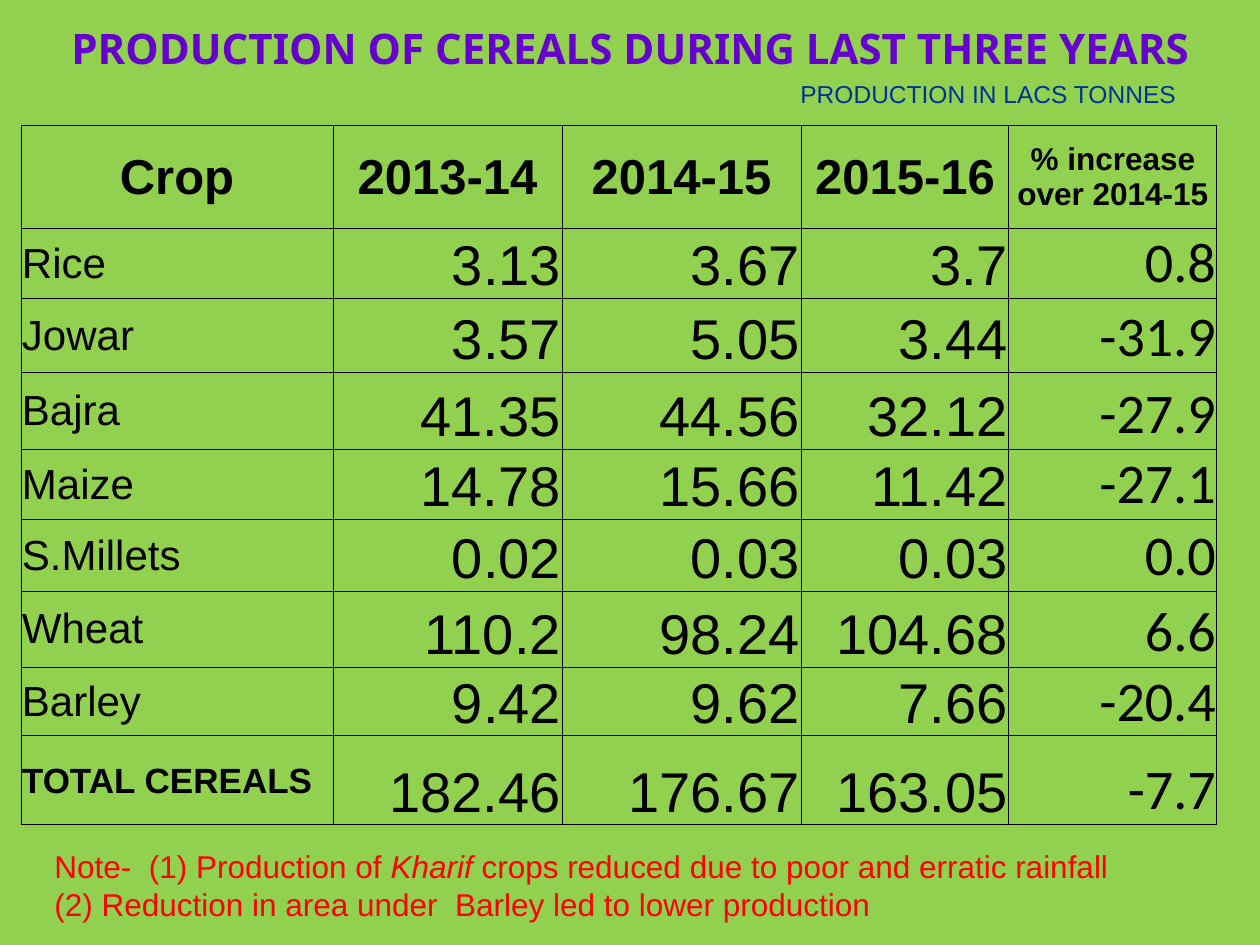
from lxml import etree
from pptx import Presentation
from pptx.dml.color import RGBColor
from pptx.enum.text import MSO_ANCHOR, PP_ALIGN
from pptx.oxml.ns import qn
from pptx.util import Emu, Pt

LEFT, CENTER, RIGHT = PP_ALIGN.LEFT, PP_ALIGN.CENTER, PP_ALIGN.RIGHT
TOP, MIDDLE, BOTTOM = MSO_ANCHOR.TOP, MSO_ANCHOR.MIDDLE, MSO_ANCHOR.BOTTOM
EMU_PER_PX = 914400 / 126

COLUMN_WIDTHS = [312, 229, 239, 208, 208]
ROW_HEIGHTS = [103, 70, 74, 77, 70, 72, 76, 69, 89]
HEADINGS = ["Crop", "2013-14", "2014-15", "2015-16", "% increase over 2014-15"]
PRODUCTION = [
    ["Rice", "3.13", "3.67", "3.7", "0.8"],
    ["Jowar", "3.57", "5.05", "3.44", "-31.9"],
    ["Bajra", "41.35", "44.56", "32.12", "-27.9"],
    ["Maize", "14.78", "15.66", "11.42", "-27.1"],
    ["S.Millets", "0.02", "0.03", "0.03", "0.0"],
    ["Wheat", "110.2", "98.24", "104.68", "6.6"],
    ["Barley", "9.42", "9.62", "7.66", "-20.4"],
    ["TOTAL CEREALS", "182.46", "176.67", "163.05", "-7.7"],
]
NOTES = [
    [
        ("Note-  (1) Production of ", {}),
        ("Kharif ", {"italic": True}),
        ("crops reduced due to poor and erratic rainfall", {}),
    ],
    [("(2) Reduction in area under  Barley led to lower production", {})],
]


def px(length):
    return Emu(round(length * EMU_PER_PX))


def color(hex_value):
    return RGBColor.from_string(hex_value)


def set_values(target, values):
    for name, value in values.items():
        setattr(target, name, value)


class SlideBuilder:
    font_name = "Arial"
    ink = "000000"

    def __init__(self, slide, background):
        self.slide = slide
        fill = slide.background.fill
        fill.solid()
        fill.fore_color.rgb = color(background)

    def fill_text(self, frame, paragraphs, size, ink=ink, align=LEFT, **font_format):
        for index, runs in enumerate(paragraphs):
            paragraph = frame.add_paragraph() if index else frame.paragraphs[0]
            paragraph.alignment = align
            for text, run_format in runs:
                run = paragraph.add_run()
                run.text = text
                values = {"name": self.font_name, "size": Pt(size), "bold": False}
                set_values(run.font, values | font_format | run_format)
                run.font.color.rgb = color(ink)

    def text(self, box, paragraphs, size, anchor=TOP, **text_format):
        frame = self.slide.shapes.add_textbox(*map(px, box)).text_frame
        set_values(frame, {"word_wrap": True, "vertical_anchor": anchor})
        self.fill_text(frame, paragraphs, size, **text_format)

    def cell(self, cell, text, size, anchor, **text_format):
        set_values(cell, {
            "margin_left": px(1), "margin_right": px(1), "margin_top": px(1),
            "margin_bottom": 0, "vertical_anchor": anchor,
        })
        properties = cell._tc.get_or_add_tcPr()
        for side in ("a:lnL", "a:lnR", "a:lnT", "a:lnB"):
            border = etree.SubElement(properties, qn(side), w=str(Pt(0.5)))
            solid = etree.SubElement(border, qn("a:solidFill"))
            etree.SubElement(solid, qn("a:srgbClr"), val=self.ink)
        cell.fill.background()
        self.fill_text(cell.text_frame, [[(text, {})]], size, **text_format)

    def table(self, left, top, headings, records, widths, heights):
        table = self.slide.shapes.add_table(
            len(heights), len(widths), px(left), px(top),
            px(sum(widths)), px(sum(heights))
        ).table
        set_values(table, {"first_row": False, "horz_banding": False})
        for column, width in zip(table.columns, widths):
            column.width = px(width)
        for row, height in zip(table.rows, heights):
            row.height = px(height)
        last = len(widths) - 1
        for column, heading in enumerate(headings):
            size = 18 if column == last else 28
            self.cell(table.cell(0, column), heading, size, MIDDLE,
                      align=CENTER, bold=True)
        for row, (crop, *figures) in enumerate(records, 1):
            is_total = row == len(records)
            self.cell(table.cell(row, 0), crop, 20 if is_total else 24, MIDDLE,
                      bold=is_total)
            for column, figure in enumerate(figures, 1):
                name = "Calibri" if column == last else self.font_name
                self.cell(table.cell(row, column), figure, 32, BOTTOM,
                          align=RIGHT, name=name)


def main():
    presentation = Presentation()
    set_values(presentation, {"slide_width": px(1260), "slide_height": px(945)})
    slide = presentation.slides.add_slide(presentation.slide_layouts[6])
    builder = SlideBuilder(slide, "92D050")
    builder.text((0, 0, 1260, 95),
                 [[("PRODUCTION OF CEREALS DURING LAST THREE YEARS", {})]], 24,
                 anchor=MIDDLE, ink="6600CC", align=CENTER,
                 name="Noto Sans", bold=True)
    builder.table(21, 125, HEADINGS, PRODUCTION, COLUMN_WIDTHS, ROW_HEIGHTS)
    builder.text((788, 73, 441, 43), [[("PRODUCTION IN LACS TONNES", {})]], 14,
                 ink="003399")
    builder.text((42, 841, 1155, 92), NOTES, 18, ink="FF0000")
    presentation.save("out.pptx")


if __name__ == "__main__":
    main()
